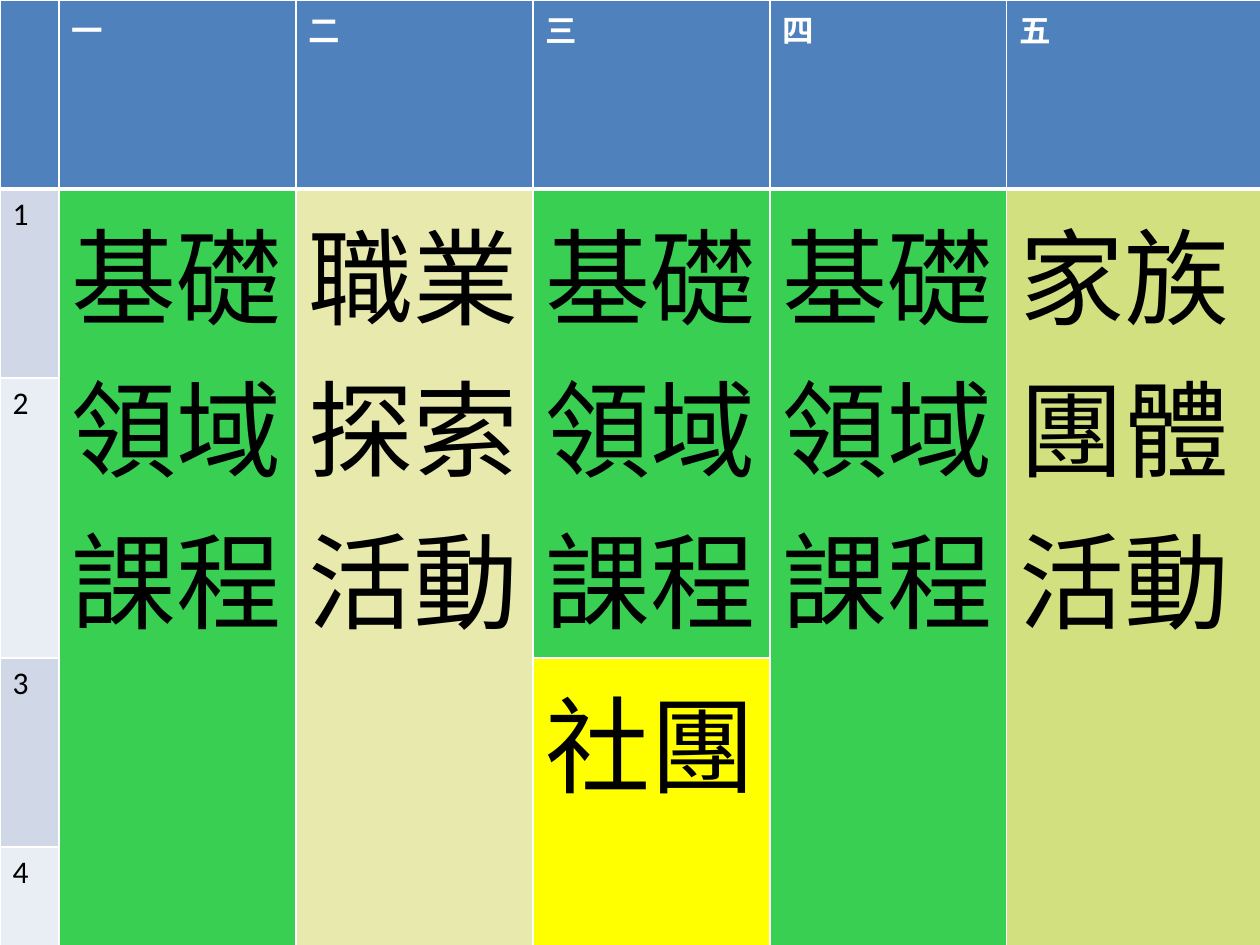
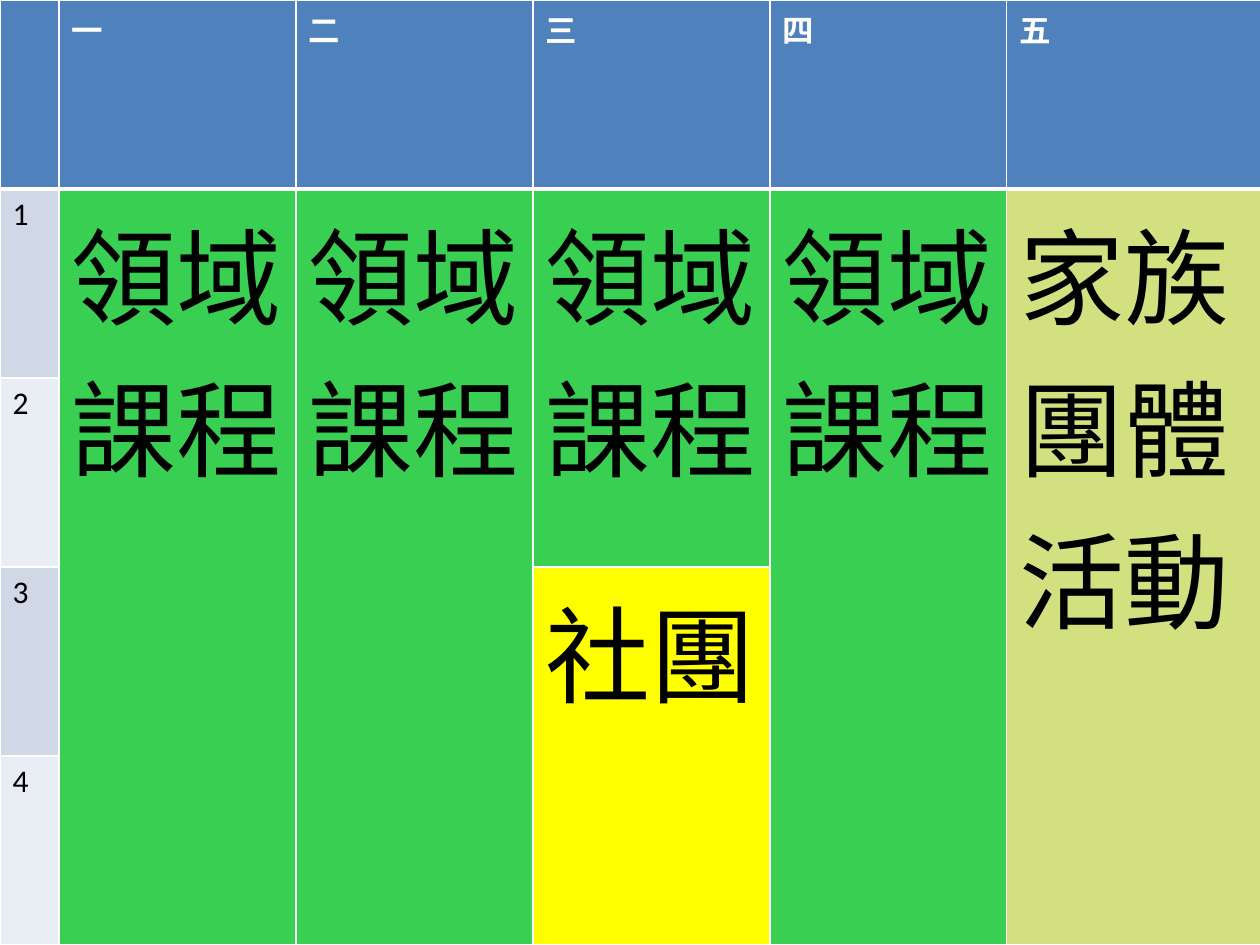
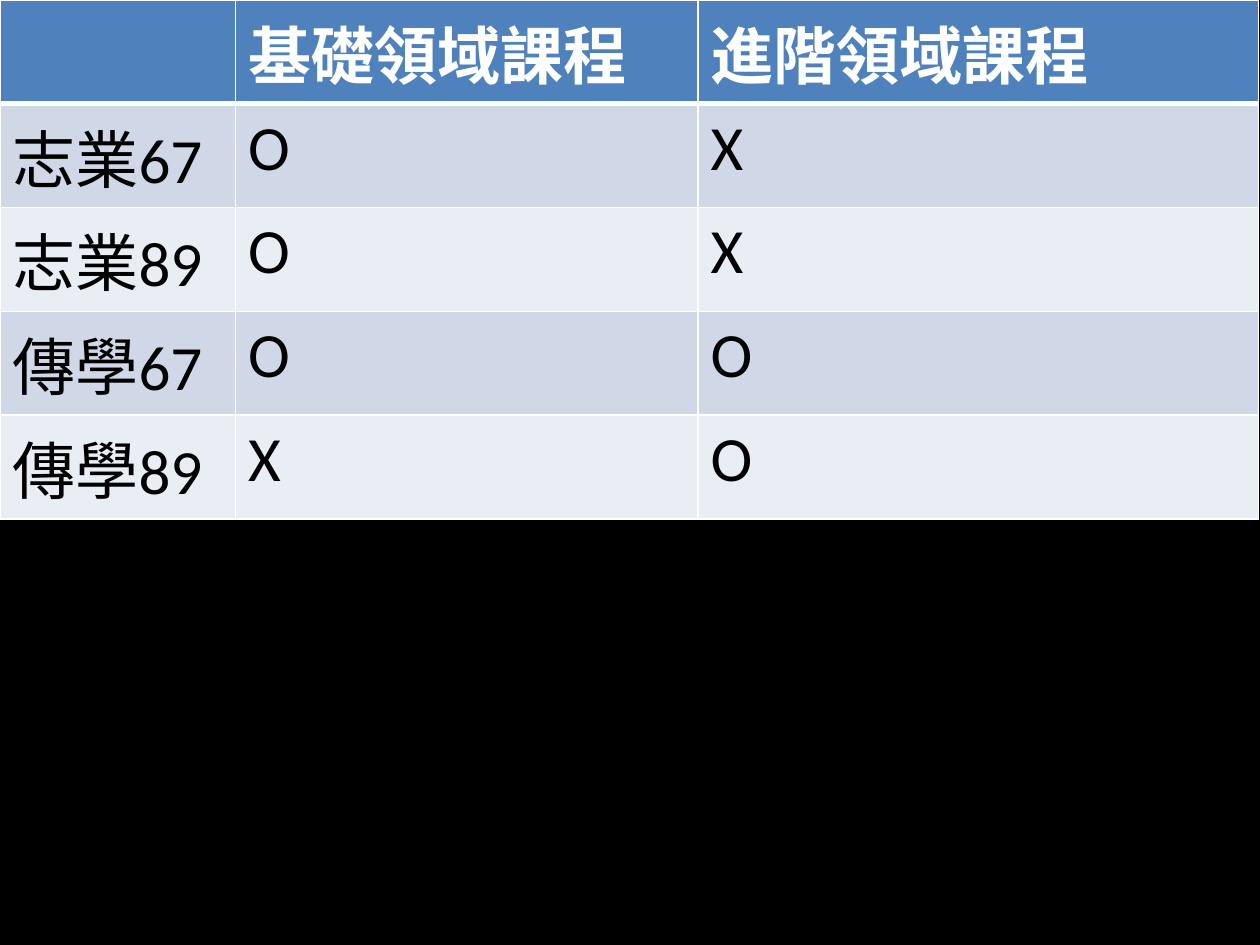
from dataclasses import dataclass

from lxml import etree
from pptx import Presentation
from pptx.dml.color import RGBColor
from pptx.oxml.ns import qn
from pptx.util import Inches, Pt


@dataclass(frozen=True)
class Theme:
    font: str = "Calibri"
    back: str = "000000"
    ink: str = "000000"
    white: str = "FFFFFF"
    head: str = "4F81BD"
    bands: tuple = ("D0D8E8", "E9EDF4")
    course: str = "39CF52"
    career: str = "E8E9AD"
    family: str = "D2E080"
    club: str = "FFFF00"
    small: int = 18
    mid: int = 36
    big: int = 60
    thin: int = 1
    thick: int = 3


THEME = Theme()
DAYS = ["", "一", "二", "三", "四", "五"]
WEEK_COLS = [0.47, 1.88, 1.88, 1.88, 1.88, 2.03]
WEEK_ROWS = [1.5] * 5
RULE_COLS = [1.87, 3.67, 4.45]
RULE_ROWS = [0.41, 0.41, 0.61, 0.41, 0.41]

# Each block: day column, first period, periods spanned, lines, colour
FAMILY = (5, 1, 4, ["家族團體活動"], THEME.family)
CLUB = (3, 3, 2, ["社團"], THEME.club)


def course(day, text, span=4):
    return day, 1, span, [text], THEME.course


BASIC = "基礎領域課程"
FIELD = "領域課程"
BASIC_WEEK = [
    course(1, BASIC),
    (2, 1, 4, ["職業探索", "活動"], THEME.career),
    course(3, BASIC, 2),
    course(4, BASIC),
    CLUB,
    FAMILY,
]
FIELD_WEEK = [
    course(1, FIELD),
    course(2, FIELD),
    course(3, FIELD, 2),
    course(4, FIELD),
    CLUB,
    FAMILY,
]
RULES = [
    ["", BASIC, "進階領域課程"],
    ["志業67", "O", "X"],
    ["志業89", "O", "X"],
    ["傳學67", "O", "O"],
    ["傳學89", "X", "O"],
]


def edge(cell, row):
    """Draw white borders, with a thick rule below the header row."""
    props = cell._tc.get_or_add_tcPr()
    for side in "LRTB":
        heavy = (side == "B" and row == 0) or (side == "T" and row == 1)
        width = Pt(THEME.thick if heavy else THEME.thin)
        line = etree.SubElement(props, qn(f"a:ln{side}"), w=str(width))
        fill = etree.SubElement(line, qn("a:solidFill"))
        etree.SubElement(fill, qn("a:srgbClr"), val=THEME.white)


def paint(cell, color):
    cell.fill.solid()
    cell.fill.fore_color.rgb = RGBColor.from_string(color)


def write(cell, lines, size, color=THEME.ink, bold=False):
    frame = cell.text_frame
    for num, text in enumerate(lines):
        para = frame.add_paragraph() if num else frame.paragraphs[0]
        if not text:
            continue
        run = para.add_run()
        run.text = text
        run.font.name = THEME.font
        run.font.size = Pt(size)
        run.font.bold = bold
        run.font.color.rgb = RGBColor.from_string(color)


def add_grid(slide, box, cols, rows):
    """Add a table with a header row and banded rows, still without text."""
    left, top, width, height = map(Inches, box)
    frame = slide.shapes.add_table(
        len(rows), len(cols), left, top, width, height)
    grid = frame.table
    grid.horz_banding = False
    for col, size in zip(grid.columns, cols):
        col.width = Inches(size)
    for row, size in zip(grid.rows, rows):
        row.height = Inches(size)
    frame.width, frame.height = width, height
    for row in range(len(rows)):
        color = THEME.bands[(row - 1) % 2] if row else THEME.head
        for col in range(len(cols)):
            cell = grid.cell(row, col)
            edge(cell, row)
            paint(cell, color)
    return grid


def write_head(grid, names, size):
    for col, name in enumerate(names):
        write(grid.cell(0, col), [name], size, THEME.white, True)


def add_week(slide, box, blocks):
    grid = add_grid(slide, box, WEEK_COLS, WEEK_ROWS)
    write_head(grid, DAYS, THEME.small)
    for row in range(1, len(WEEK_ROWS)):
        write(grid.cell(row, 0), [str(row)], THEME.small)
    for day, start, span, lines, color in blocks:
        for row in range(start, start + span):
            paint(grid.cell(row, day), color)
        cell = grid.cell(start, day)
        cell.merge(grid.cell(start + span - 1, day))
        write(cell, lines, THEME.big)


def add_rules(slide, box, lines):
    grid = add_grid(slide, box, RULE_COLS, RULE_ROWS)
    write_head(grid, lines[0], THEME.mid)
    for row, line in enumerate(lines[1:], 1):
        for col, text in enumerate(line):
            write(grid.cell(row, col), [text], THEME.mid)


def add_page(deck):
    slide = deck.slides.add_slide(deck.slide_layouts[6])
    fill = slide.background.fill
    fill.solid()
    fill.fore_color.rgb = RGBColor.from_string(THEME.back)
    return slide


def main():
    deck = Presentation()
    deck.slide_width, deck.slide_height = Inches(10), Inches(7.5)
    add_week(add_page(deck), (0, 0, 10, 7.6), BASIC_WEEK)
    add_week(add_page(deck), (0, 0, 10, 7.5), FIELD_WEEK)
    add_rules(add_page(deck), (0, 0, 10, 3.5), RULES)
    deck.save("out.pptx")


if __name__ == "__main__":
    main()
